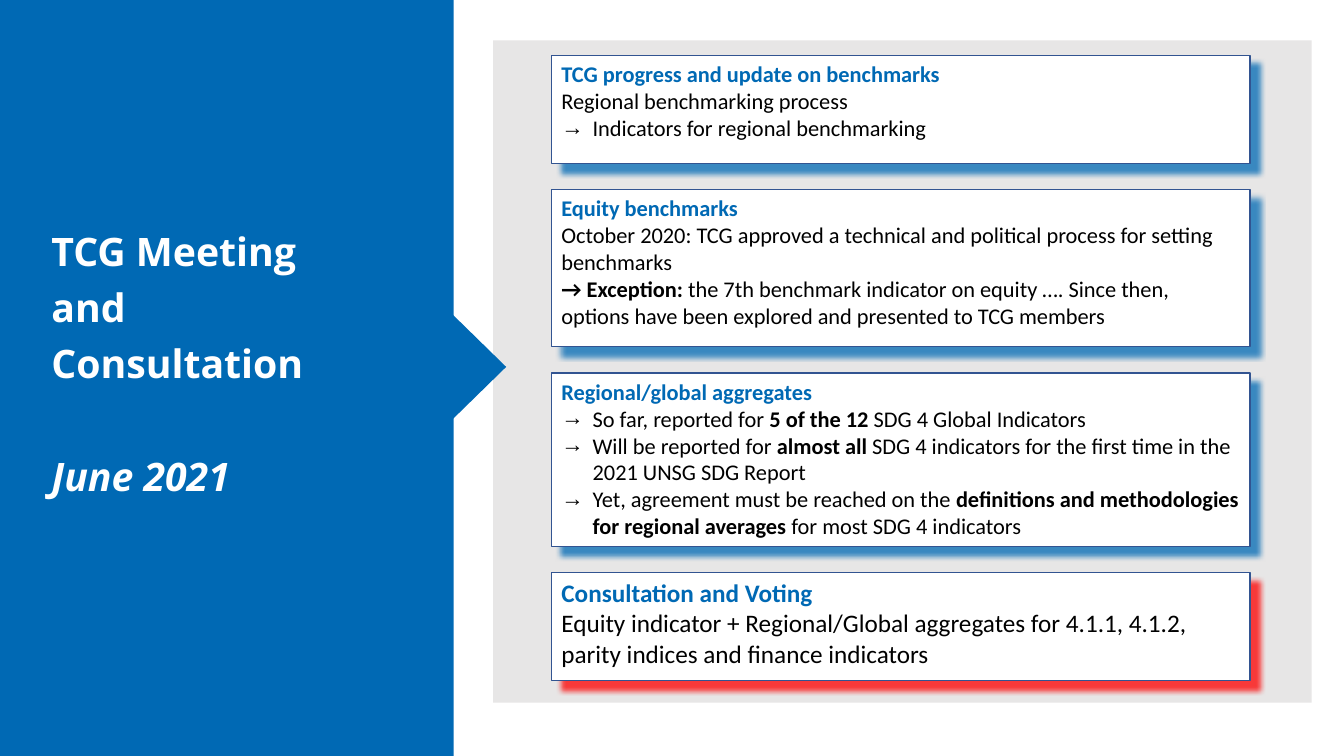
from dataclasses import dataclass

from lxml import etree
from pptx import Presentation
from pptx import util as u
from pptx.dml.color import RGBColor
from pptx.enum import shapes, text
from pptx.oxml import ns

BLUE = RGBColor(0x00, 0x69, 0xB4)
BORDER = RGBColor(0x32, 0x54, 0x91)
GREY = RGBColor(0xE7, 0xE6, 0xE6)
RED = RGBColor(0xFF, 0x00, 0x00)
WHITE = RGBColor(0xFF, 0xFF, 0xFF)
BLACK = RGBColor(0x00, 0x00, 0x00)

CARD_LEFT, CARD_TOP, CARD_WIDTH, CARD_GAP = 5.47, 0.55, 6.93, 0.26
BULLET_INDENT = 0.31


@dataclass
class Line:
    """Runs alternate between regular and bold, starting with regular."""
    runs: tuple[str, ...]
    bullet: bool = False


@dataclass
class Card:
    heading: str
    height: float
    lines: list[Line]
    size: int = 16
    shadow: RGBColor = BLUE


CARDS = [
    Card("TCG progress and update on benchmarks", 1.07, [
        Line(("Regional benchmarking process",)),
        Line(("Indicators for regional benchmarking",), bullet=True),
    ]),
    Card("Equity benchmarks", 1.56, [
        Line(("October 2020: TCG approved a technical and political process "
              "for setting benchmarks",)),
        Line(("", "→ Exception: ",
              "the 7th benchmark indicator on equity …. Since then, options "
              "have been explored and presented to TCG members")),
    ]),
    Card("Regional/global aggregates", 1.72, [
        Line(("So far, reported for ", "5 of the 12 ",
              "SDG 4 Global Indicators"), bullet=True),
        Line(("Will be reported for ", "almost all ",
              "SDG 4 indicators for the first time in the 2021 UNSG SDG Report"),
             bullet=True),
        Line(("Yet, agreement must be reached on the ",
              "definitions and methodologies for regional averages ",
              "for most SDG 4 indicators"), bullet=True),
    ]),
    Card("Consultation and Voting", 1.07, [
        Line(("Equity indicator + Regional/Global aggregates for 4.1.1, 4.1.2, "
              "parity indices and finance indicators",)),
    ], size=18, shadow=RED),
]


def add_run(p, content: str, **formats) -> None:
    r = p.add_run()
    r.text = content
    color = formats.pop("color")
    for name, value in formats.items():
        setattr(r.font, name, value)
    r.font.color.rgb = color


def add_block(s, kind, left: float, top: float, width: float, height: float,
              fill: RGBColor):
    sp = s.shapes.add_shape(kind, u.Inches(left), u.Inches(top),
                            u.Inches(width), u.Inches(height))
    sp.shadow.inherit = False
    sp.fill.solid()
    sp.fill.fore_color.rgb = fill
    sp.line.fill.background()
    return sp


def add_shadow(sp, color: RGBColor) -> None:
    effects = sp._element.spPr.find(ns.qn("a:effectLst"))
    outer = etree.SubElement(effects, ns.qn("a:outerShdw"), {
        "blurRad": str(u.Pt(4)), "dist": str(u.Pt(9)), "dir": "2700000",
        "algn": "tl", "rotWithShape": "0"})
    clr = etree.SubElement(outer, ns.qn("a:srgbClr"), val=str(color))
    etree.SubElement(clr, ns.qn("a:alpha"), val="75000")


def add_bullet(p) -> None:
    pPr = p._p.get_or_add_pPr()
    indent = u.Inches(BULLET_INDENT)
    pPr.set("marL", str(indent))
    pPr.set("indent", str(-indent))
    etree.SubElement(pPr, ns.qn("a:buFont"), typeface="Arial")
    etree.SubElement(pPr, ns.qn("a:buChar"), char="→")


def add_card(s, card: Card, top: float) -> None:
    sp = add_block(s, shapes.MSO_SHAPE.RECTANGLE, CARD_LEFT, top, CARD_WIDTH,
                   card.height, WHITE)
    sp.line.color.rgb = BORDER
    sp.line.width = u.Pt(1)
    add_shadow(sp, card.shadow)
    tf = sp.text_frame
    tf.word_wrap = True
    tf.vertical_anchor = text.MSO_ANCHOR.TOP
    font = {"name": "Calibri", "size": u.Pt(card.size)}
    p = tf.paragraphs[0]
    p.alignment = text.PP_ALIGN.LEFT
    add_run(p, card.heading, color=BLUE, bold=True, **font)
    for line in card.lines:
        p = tf.add_paragraph()
        p.alignment = text.PP_ALIGN.LEFT
        if line.bullet:
            add_bullet(p)
        for i, content in enumerate(line.runs):
            if content:
                add_run(p, content, color=BLACK, bold=i % 2 == 1, **font)


def add_title(s) -> None:
    sp = s.shapes.title
    place = {"left": 0.41, "top": 0.4, "width": 3.48, "height": 6.46}
    for name, value in place.items():
        setattr(sp, name, u.Inches(value))
    tf = sp.text_frame
    tf.word_wrap = True
    tf.auto_size = text.MSO_AUTO_SIZE.NONE
    tf.vertical_anchor = text.MSO_ANCHOR.MIDDLE
    # The date stands one line apart from the name of the meeting
    rows = [("TCG Meeting", 0), ("and", 10), ("Consultation", 10),
            ("June 2021", 50)]
    for i, (content, space) in enumerate(rows):
        p = tf.add_paragraph() if i else tf.paragraphs[0]
        formats = {"alignment": text.PP_ALIGN.LEFT, "line_spacing": 0.9,
                   "space_before": u.Pt(space)}
        for name, value in formats.items():
            setattr(p, name, value)
        add_run(p, content, name="Open Sans", size=u.Pt(28), color=WHITE,
                bold=True, italic=content == "June 2021")


def main() -> None:
    prs = Presentation()
    prs.slide_width, prs.slide_height = u.Inches(13.33), u.Inches(7.5)
    s = prs.slides.add_slide(prs.slide_layouts[5])

    # Grey backdrop, blue side panel and its pointer
    add_block(s, shapes.MSO_SHAPE.RECTANGLE, 4.89, 0.4, 8.12, 6.57, GREY)
    add_block(s, shapes.MSO_SHAPE.RECTANGLE, 0, 0, 4.5, 7.5, BLUE)
    pointer = add_block(s, shapes.MSO_SHAPE.ISOSCELES_TRIANGLE,
                        3.66, 3.18, 1.8, 0.92, BLUE)
    pointer.rotation = 90

    # Title in front of the panel
    add_title(s)
    s.shapes._spTree.append(s.shapes.title._element)

    # Stack of cards
    top = CARD_TOP
    for card in CARDS:
        add_card(s, card, top)
        top += card.height + CARD_GAP

    prs.save("out.pptx")


if __name__ == "__main__":
    main()
